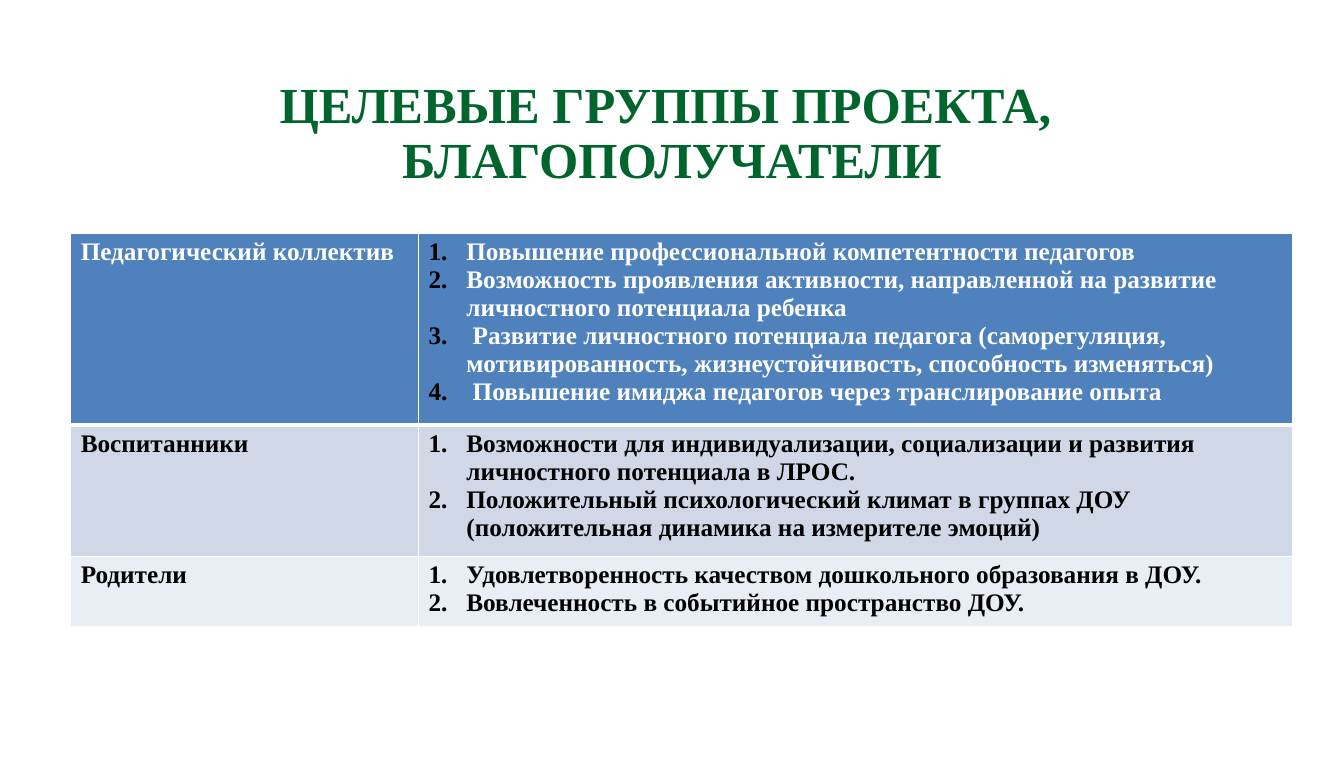
from lxml import etree
from pptx import Presentation
from pptx.dml.color import RGBColor
from pptx.enum.text import PP_ALIGN
from pptx.oxml.ns import qn
from pptx.util import Pt

CENTER = PP_ALIGN.CENTER
GREEN = RGBColor(0x00, 0x64, 0x2D)
BLUE = RGBColor(0x4F, 0x81, 0xBD)
PALE = RGBColor(0xD0, 0xD8, 0xE8)
LIGHT = RGBColor(0xE9, 0xED, 0xF4)
WHITE = RGBColor(0xFF, 0xFF, 0xFF)
BLACK = RGBColor(0x00, 0x00, 0x00)

TITLE = ["ЦЕЛЕВЫЕ ГРУППЫ ПРОЕКТА, ", "БЛАГОПОЛУЧАТЕЛИ"]
GROUPS = [
    ("Педагогический коллектив", [
        "Повышение профессиональной компетентности педагогов",
        "Возможность проявления активности, направленной на развитие личностного потенциала ребенка",
        " Развитие личностного потенциала педагога (саморегуляция, мотивированность, жизнеустойчивость, способность изменяться)",
        " Повышение имиджа педагогов через транслирование опыта",
    ]),
    ("Воспитанники", [
        "Возможности для индивидуализации, социализации и развития личностного потенциала в ЛРОС.",
        "Положительный психологический климат в группах ДОУ (положительная динамика на измерителе эмоций)",
    ]),
    ("Родители", [
        "Удовлетворенность качеством дошкольного образования в ДОУ.",
        "Вовлеченность в событийное пространство ДОУ.",
    ]),
]
LOOKS = [(136.5, BLUE, WHITE, 3), (93.5, PALE, BLACK, 1), (50.5, LIGHT, BLACK, 1)]
WIDTHS = [248, 623.5]
LEFT, TOP = 50.4, 166.3
WIDE, HIGH = 958.4, 540
INDENT = 27


def write(frame, lines, size, color):
    look = {"name": "Times New Roman", "size": Pt(size), "bold": True}
    paras = []
    for num, line in enumerate(lines):
        para = frame.add_paragraph() if num else frame.paragraphs[0]
        run = para.add_run()
        run.text = line
        for key, value in look.items():
            setattr(run.font, key, value)
        run.font.color.rgb = color
        paras.append(para)
    return paras


def number(para):
    props = para._p.get_or_add_pPr()
    props.set("marL", str(Pt(INDENT)))
    props.set("indent", str(-Pt(INDENT)))
    tint = etree.SubElement(props, qn("a:buClr"))
    etree.SubElement(tint, qn("a:srgbClr"), val=str(BLACK))
    etree.SubElement(props, qn("a:buFont"), typeface="+mj-lt")
    etree.SubElement(props, qn("a:buAutoNum"), type="arabicPeriod")


def border(cell, sides):
    props = cell._tc.get_or_add_tcPr()
    for side, width in sides.items():
        line = etree.SubElement(props, qn("a:ln" + side), w=str(Pt(width)))
        fill = etree.SubElement(line, qn("a:solidFill"))
        etree.SubElement(fill, qn("a:srgbClr"), val=str(WHITE))


def main():
    deck = Presentation()
    deck.slide_width, deck.slide_height = Pt(WIDE), Pt(HIGH)
    slide = deck.slides.add_slide(deck.slide_layouts[6])

    frame = slide.shapes.add_textbox(0, Pt(57), Pt(WIDE), Pt(78.5)).text_frame
    inset = {"margin_left": 0, "margin_top": 0, "margin_right": 0,
             "margin_bottom": 0, "word_wrap": True}
    for key, value in inset.items():
        setattr(frame, key, value)
    for para in write(frame, TITLE, 36, GREEN):
        para.alignment = CENTER
        para.line_spacing = 0.9

    total = sum(look[0] for look in LOOKS)
    table = slide.shapes.add_table(
        len(GROUPS), len(WIDTHS), Pt(LEFT), Pt(TOP), Pt(sum(WIDTHS)), Pt(total)).table
    for col, width in zip(table.columns, WIDTHS):
        col.width = Pt(width)

    above = 1
    for row, (group, gains), look in zip(table.rows, GROUPS, LOOKS):
        height, fill, color, below = look
        row.height = Pt(height)
        for cell, lines in zip(row.cells, ([group], gains)):
            border(cell, {"L": 1, "R": 1, "T": above, "B": below})
            cell.fill.solid()
            cell.fill.fore_color.rgb = fill
            paras = write(cell.text_frame, lines, 18, color)
            if lines is gains:
                for para in paras:
                    number(para)
        above = below

    deck.save("out.pptx")


if __name__ == "__main__":
    main()
